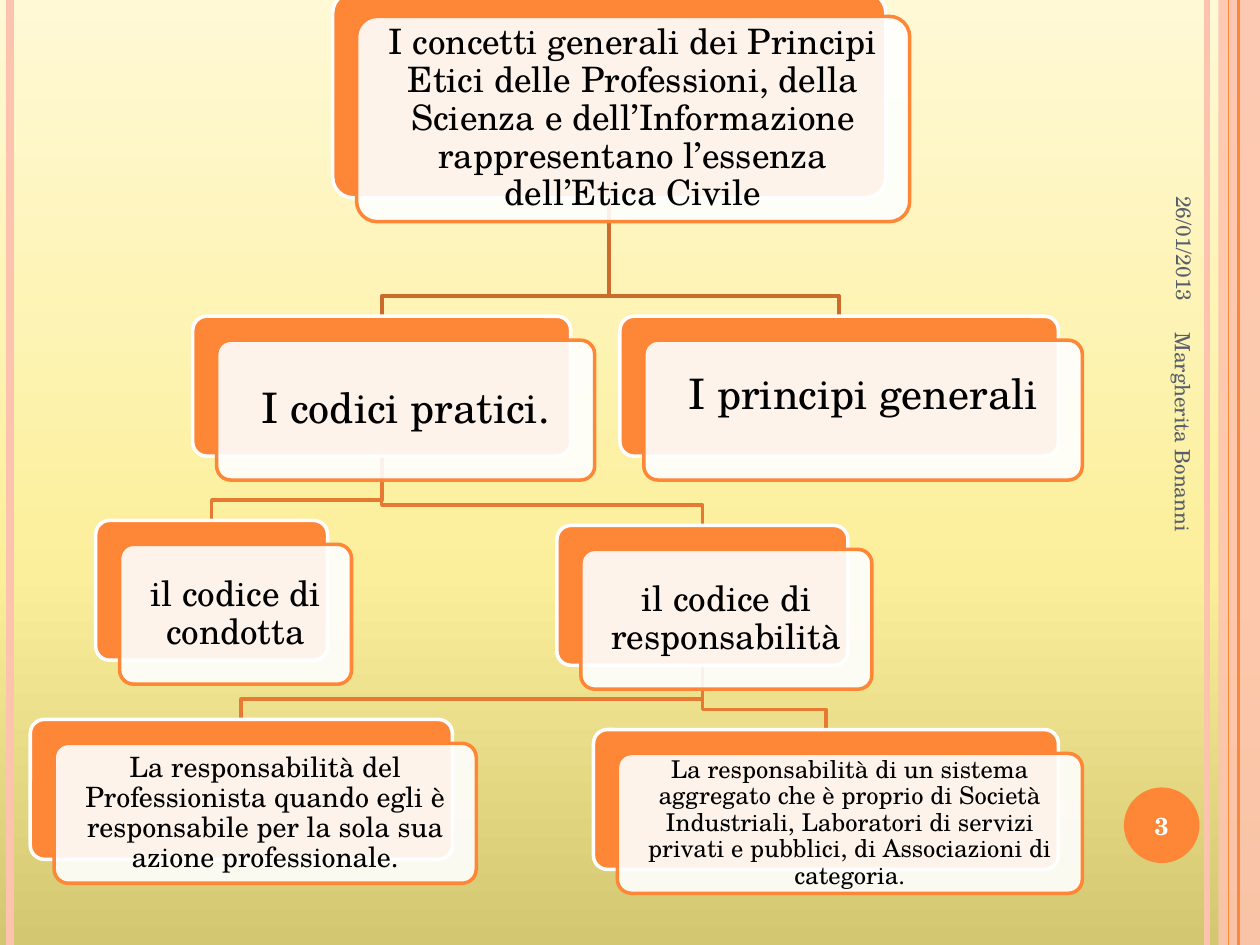
"""Build a slide with a tree of ethics concepts on layered cards."""
from copy import deepcopy

from lxml import etree
from pptx import Presentation
from pptx.dml.color import RGBColor
from pptx.enum.shapes import MSO_CONNECTOR, MSO_SHAPE
from pptx.enum.text import MSO_ANCHOR, PP_ALIGN
from pptx.oxml.ns import qn
from pptx.util import Inches, Pt

STRAIGHT = MSO_CONNECTOR.STRAIGHT
RECT, ROUND, OVAL = MSO_SHAPE.RECTANGLE, MSO_SHAPE.ROUNDED_RECTANGLE, MSO_SHAPE.OVAL
MIDDLE = MSO_ANCHOR.MIDDLE
LEFT, CENTER, RIGHT = PP_ALIGN.LEFT, PP_ALIGN.CENTER, PP_ALIGN.RIGHT
ORANGE = RGBColor(0xFE, 0x86, 0x37)
PINK = RGBColor(0xFE, 0xC3, 0xAE)
RUST = RGBColor(0xCB, 0x6B, 0x2C)
AMBER = RGBColor(0xE7, 0x7A, 0x32)
SLATE = RGBColor(0x57, 0x5F, 0x6D)
WHITE = RGBColor(0xFF, 0xFF, 0xFF)
BLACK = RGBColor(0x00, 0x00, 0x00)
STOPS = [
    (0, RGBColor(0xD3, 0xC7, 0x72)),
    (0.4, RGBColor(0xFC, 0xEF, 0x9B)),
    (1, RGBColor(0xFF, 0xF9, 0xD5)),
]
FACE = "TeX Gyre Schola"

deck = Presentation()
deck.slide_width, deck.slide_height = Inches(10), Inches(7.5)
COL, ROW = deck.slide_width / 100, deck.slide_height / 75
slide = deck.slides.add_slide(deck.slide_layouts[6])
shapes = slide.shapes


def paint(shape, fill, line=None, alpha=100):
    shape.shadow.inherit = False
    shape.fill.solid()
    shape.fill.fore_color.rgb = fill
    if alpha < 100:
        tone = shape._element.spPr.find(qn("a:solidFill"))[0]
        etree.SubElement(tone, qn("a:alpha"), val=str(alpha * 1000))
    if line is None:
        shape.line.fill.background()
    else:
        shape.line.color.rgb = line
        shape.line.width = Pt(2)


def write(shape, text, size, color, align=CENTER, pad=(0.1, 0.05), space=1, bold=False):
    frame = shape.text_frame
    side, edge = Inches(pad[0]), Inches(pad[1])
    form = {"word_wrap": True, "vertical_anchor": MIDDLE, "margin_left": side,
            "margin_right": side, "margin_top": edge, "margin_bottom": edge}
    for name, value in form.items():
        setattr(frame, name, value)
    para = frame.paragraphs[0]
    para.alignment, para.line_spacing = align, space
    run = para.add_run()
    run.text = text
    for name, value in {"name": FACE, "size": Pt(size), "bold": bold}.items():
        setattr(run.font, name, value)
    run.font.color.rgb = color


back = slide.background.fill
back.gradient()
back.gradient_angle = 90
stops = slide._element.find(".//" + qn("a:gsLst"))
stops.append(deepcopy(stops[0]))
for stop, (place, color) in zip(back.gradient_stops, STOPS):
    stop.position = place
    stop.color.rgb = color

band = shapes.add_shape(RECT, int(96.7 * COL), 0, int(3.3 * COL), int(75 * ROW))
paint(band, PINK, alpha=87)
for x, color, width in [(95.8, PINK, 3), (0.8, PINK, 4.5), (98.3, ORANGE, 1.5), (97.5, ORANGE, 0.75)]:
    rule = shapes.add_connector(STRAIGHT, int(x * COL), 0, int(x * COL), int(75 * ROW))
    rule.line.color.rgb, rule.line.width = color, Pt(width)
    etree.SubElement(rule._element.spPr, qn("a:effectLst"))

badge = shapes.add_shape(OVAL, int(89.2 * COL), int(62.5 * ROW), int(6 * COL), int(6 * ROW))
paint(badge, ORANGE)
write(badge, "3", 14, WHITE, pad=(0, 0), bold=True)

cards = {
    "root": (26.4, -0.6, 43.9, 16.3, 20, 0.08, "I concetti generali dei Principi Etici delle Professioni, "
             "della Scienza e dell’Informazione rappresentano l’essenza dell’Etica Civile"),
    "codes": (15.3, 25.1, 30, 11.1, 24, 0.1, "I codici pratici."),
    "rules": (7.6, 41.3, 18.4, 11.1, 20, 0.08, "il codice di condotta"),
    "duty": (44.2, 41.7, 23.1, 11.1, 20, 0.08, "il codice di responsabilità"),
    "single": (2.4, 57.1, 33.5, 11.1, 16, 0.07, "La responsabilità del Professionista quando egli è "
               "responsabile per la sola sua azione professionale."),
    "system": (47.1, 57.9, 36.9, 11.1, 14, 0.06, "La responsabilità di un sistema aggregato che è proprio di "
               "Società Industriali, Laboratori di servizi privati e pubblici, di Associazioni di categoria."),
    "ideas": (49.2, 25.1, 34.8, 11.1, 24, 0.1, "I principi generali"),
}
links = [("root", "ideas", RUST), ("duty", "system", AMBER), ("duty", "single", AMBER),
         ("codes", "duty", AMBER), ("codes", "rules", AMBER), ("root", "codes", RUST)]

for above, below, color in links:
    x, y, w, h = cards[above][:4]
    left, top, wide = cards[below][:3]
    start, end, turn = x + w / 2, left + wide / 2, top - 1.6
    path = shapes.build_freeform(int(start * COL), int((y + h) * ROW))
    path.add_line_segments([(int(a * COL), int(b * ROW)) for a, b in
                            [(start, turn), (end, turn), (end, top)]], close=False)
    elbow = path.convert_to_shape()
    elbow.shadow.inherit = False
    elbow.fill.background()
    elbow.line.color.rgb, elbow.line.width = color, Pt(2)

for name, (x, y, w, h, size, pad, text) in cards.items():
    for step, fill, line, alpha in [(0, ORANGE, WHITE, 100), (1.9, WHITE, ORANGE, 90)]:
        card = shapes.add_shape(ROUND, int((x + step) * COL), int((y + step) * ROW),
                                int(w * COL), int(h * ROW))
        card.adjustments[0] = 0.1
        paint(card, fill, line, alpha)
    inset = pad - 0.03 * h / 10
    write(card, text, size, BLACK, pad=(inset, inset), space=0.9)
    if name == "ideas":
        card.text_frame.margin_bottom = Inches(0.35)
        card.text_frame.paragraphs[0].line_spacing = 1

for text, x, y, w, h, align in [("26/01/2013", 83, 11.8, 22, 4.2, RIGHT),
                                ("Margherita Bonanni", 76.4, 40.9, 35, 4, LEFT)]:
    note = shapes.add_textbox(int(x * COL), int(y * ROW), int(w * COL), int(h * ROW))
    note.rotation = 90
    write(note, text, 12, SLATE, align)

deck.save("out.pptx")
